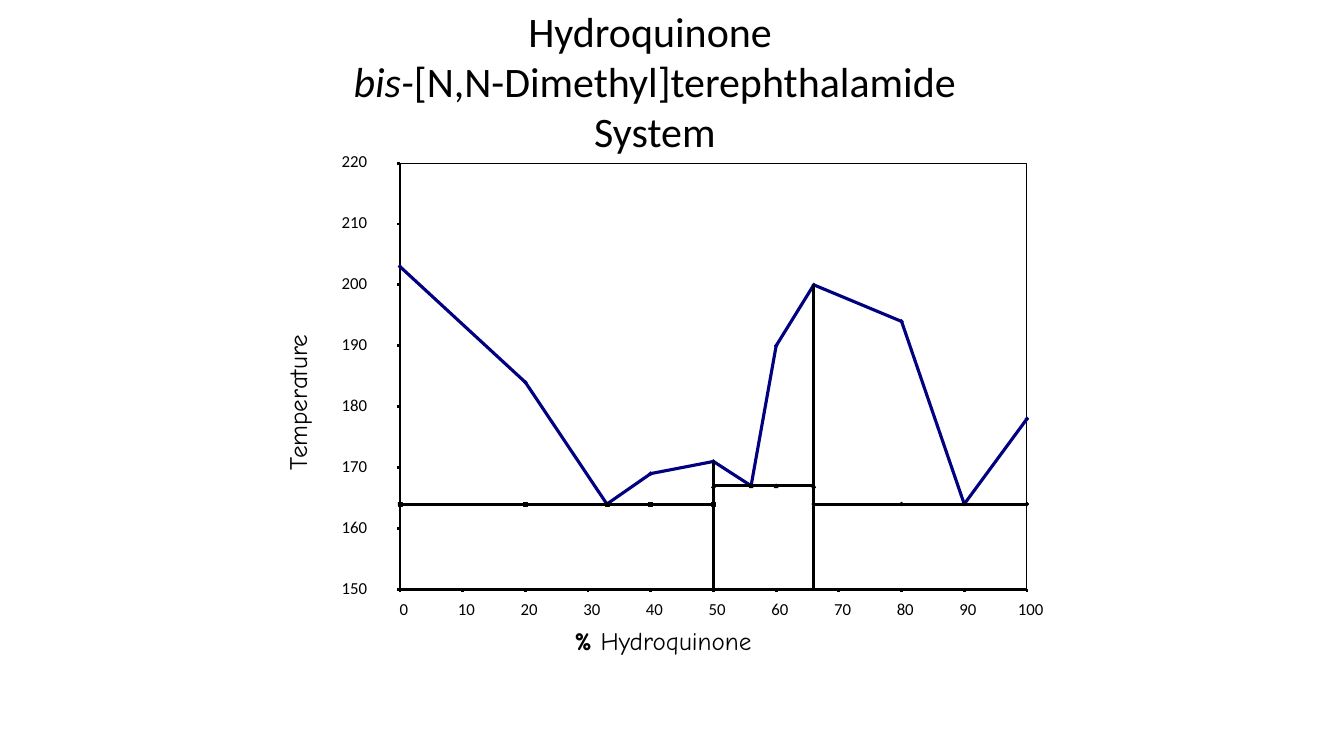
from dataclasses import dataclass
from itertools import pairwise

from lxml import etree
from pptx import Presentation
from pptx.dml.color import RGBColor
from pptx.enum.shapes import MSO_CONNECTOR, MSO_SHAPE
from pptx.enum.text import MSO_ANCHOR, MSO_AUTO_SIZE, PP_ALIGN
from pptx.oxml.ns import qn
from pptx.util import Cm, Pt

STRAIGHT = MSO_CONNECTOR.STRAIGHT
RECTANGLE = MSO_SHAPE.RECTANGLE
DIAMOND = MSO_SHAPE.DIAMOND
TRIANGLE = MSO_SHAPE.ISOSCELES_TRIANGLE
TOP = MSO_ANCHOR.TOP
CENTER = PP_ALIGN.CENTER
NO_FIT = MSO_AUTO_SIZE.NONE
BOTTOM_SIDE = 2

COLORS = {"ink": "000000", "curve": "000080"}
BODY_FONT = "Calibri"
AXIS_FONT = "Comic Neue"

# Plot area and marker size in centimetres, axis ranges in chart units
PLOT_LEFT, PLOT_TOP, PLOT_WIDTH, PLOT_HEIGHT = 10.08, 4.11, 15.8, 10.74
PLOT_BOTTOM = PLOT_TOP + PLOT_HEIGHT
TICK = 0.08
MARKER = 0.1
COLDEST, HOTTEST = 150, 220
HAIRLINE, THICK, MARKER_EDGE = 0, 2.25, 0.38


@dataclass(frozen=True)
class Series:
    points: tuple[tuple[int, int], ...]
    color: str
    marker: MSO_SHAPE


SERIES = [
    Series(
        ((0, 203), (20, 184), (33, 164), (40, 169), (50, 171), (56, 167),
         (60, 190), (66, 200), (80, 194), (90, 164), (100, 178)),
        "curve", DIAMOND,
    ),
    Series(tuple((x, 164) for x in (0, 20, 33, 40, 50)), "ink", RECTANGLE),
    Series(tuple((x, 167) for x in (50, 56, 60, 66)), "ink", TRIANGLE),
    Series(tuple((x, 164) for x in (66, 80, 90, 100)), "ink", DIAMOND),
]
COMPOUND_PEAKS = [(66, 200), (50, 171)]


def x_of(percent: float) -> float:
    return PLOT_LEFT + PLOT_WIDTH * percent / 100


def y_of(temperature: float) -> float:
    return PLOT_BOTTOM - PLOT_HEIGHT * (temperature - COLDEST) / (HOTTEST - COLDEST)


def rgb(name: str) -> RGBColor:
    return RGBColor.from_string(COLORS[name])


def add_line(page, start: tuple, end: tuple, *, color: str = "ink", width: float = HAIRLINE):
    line = page.shapes.add_connector(STRAIGHT, *map(Cm, (*start, *end)))
    line.line.color.rgb = rgb(color)
    line.line.width = Pt(width)
    etree.SubElement(line._element.spPr, qn("a:effectLst"))
    return line


def add_box(page, kind, left: float, top: float, width: float, height: float,
            *, edge: float, color: str = "ink", filled: bool = True):
    box = page.shapes.add_shape(kind, Cm(left), Cm(top), Cm(width), Cm(height))
    box.shadow.inherit = False
    if filled:
        box.fill.solid()
        box.fill.fore_color.rgb = rgb(color)
    else:
        box.fill.background()
    box.line.color.rgb = rgb(color)
    box.line.width = Pt(edge)
    return box


def add_span(para, text: str, *, size: float, font: str = BODY_FONT,
             bold: bool = False, italic: bool = False) -> None:
    span = para.add_run()
    span.text = text
    span.font.name = font
    span.font.size = Pt(size)
    span.font.bold = bold
    span.font.italic = italic
    span.font.color.rgb = rgb("ink")


def add_label(page, left: float, top: float, width: float, height: float, rotation: float = 0):
    """Add a text box without margins or wrapping and return its paragraph."""
    box = page.shapes.add_textbox(Cm(left), Cm(top), Cm(width), Cm(height))
    box.rotation = rotation
    frame = box.text_frame
    frame.margin_left = frame.margin_right = frame.margin_top = frame.margin_bottom = 0
    frame.word_wrap = False
    return frame.paragraphs[0]


def add_tick_label(page, value: int, left: float, top: float, width: float) -> None:
    add_span(add_label(page, left, top, width, 0.51), str(value), size=12)


def draw_axes(page):
    """Draw the plot frame, ticks and labels, and return the frame."""
    frame = add_box(page, RECTANGLE, PLOT_LEFT, PLOT_TOP, PLOT_WIDTH, PLOT_HEIGHT,
                    edge=HAIRLINE, filled=False)
    corner = (PLOT_LEFT, PLOT_BOTTOM)
    add_line(page, (PLOT_LEFT, PLOT_TOP), corner)
    add_line(page, corner, (PLOT_LEFT + PLOT_WIDTH, PLOT_BOTTOM))
    for temperature in range(COLDEST, HOTTEST + 1, 10):
        y = y_of(temperature)
        add_line(page, (PLOT_LEFT - TICK, y), (PLOT_LEFT, y))
        add_tick_label(page, temperature, 8.61, y - 0.3, 0.66)
    for percent in range(0, 101, 10):
        x = x_of(percent)
        tick = add_line(page, (x, PLOT_BOTTOM + TICK), (x, PLOT_BOTTOM))
        if percent == 50:
            tick.end_connect(frame, BOTTOM_SIDE)
        width = 0.22 * len(str(percent))
        add_tick_label(page, percent, x + 0.1 - width / 2, 15.09, width)
    para = add_label(page, 14.48, 15.77, 4.83, 0.76)
    add_span(para, "% ", size=18, font=AXIS_FONT, bold=True)
    add_span(para, "Hydroquinone", size=18, font=AXIS_FONT)
    para = add_label(page, 5.54, 9.52, 3.89, 0.76, rotation=270)
    add_span(para, "Temperature", size=18, font=AXIS_FONT)
    return frame


def draw_series(page, series: Series) -> None:
    spots = [(x_of(percent), y_of(temperature)) for percent, temperature in series.points]
    for start, end in pairwise(spots):
        add_line(page, start, end, color=series.color, width=THICK)
    for x, y in spots:
        add_box(page, series.marker, x - MARKER / 2, y - MARKER / 2, MARKER, MARKER,
                edge=MARKER_EDGE, color=series.color)


def write_title(page) -> None:
    title = page.shapes.title
    title.left, title.top, title.width, title.height = map(Cm, (8.15, 0, 16.71, 4.06))
    frame = title.text_frame
    frame.word_wrap = True
    frame.auto_size = NO_FIT
    frame.vertical_anchor = TOP
    compound, system = frame.paragraphs[0], frame.add_paragraph()
    for para in (compound, system):
        para.alignment = CENTER
    add_span(compound, "Hydroquinone ", size=30)
    add_span(system, "bis-", size=30, italic=True)
    add_span(system, "[N,N-Dimethyl]terephthalamide System", size=30)


def main() -> None:
    deck = Presentation()
    deck.slide_width, deck.slide_height = Cm(33.87), Cm(19.05)
    page = deck.slides.add_slide(deck.slide_layouts[5])
    write_title(page)
    frame = draw_axes(page)
    for series in SERIES:
        draw_series(page, series)
    for percent, temperature in COMPOUND_PEAKS:
        x = x_of(percent)
        line = add_line(page, (x, y_of(temperature)), (x, PLOT_BOTTOM), width=THICK)
        if percent == 50:
            line.end_connect(frame, BOTTOM_SIDE)
    deck.save("out.pptx")


if __name__ == "__main__":
    main()
